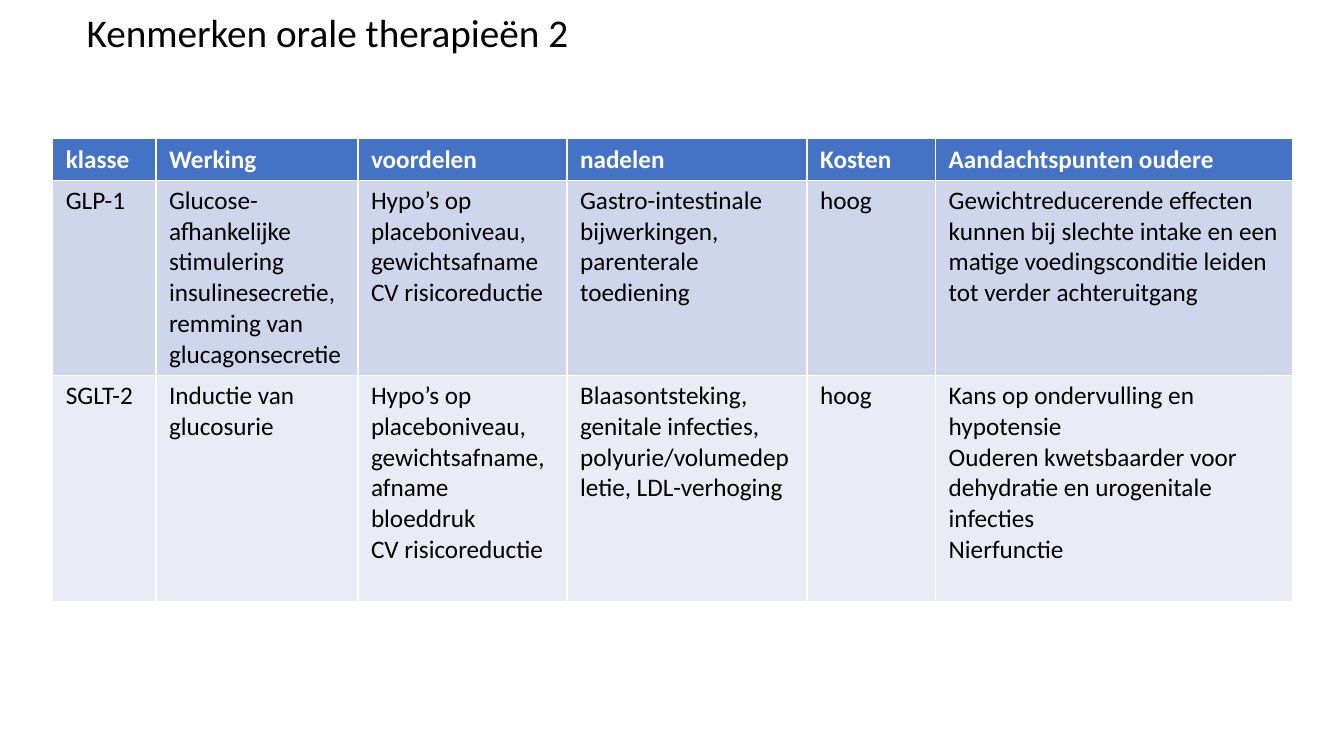
import pptx
import pptx.dml.color
import pptx.enum.text
import pptx.util

Cm = pptx.util.Cm
Pt = pptx.util.Pt

HEADER_FILL = "4472C4"
BODY_FILLS = ["CFD5EA", "E9EBF5"]
COLUMN_WIDTHS = [2.6, 5.09, 5.27, 6.05, 3.24, 9]
ROW_HEIGHTS = [1.04, 4.92, 5.69]
THERAPIES = [
    ["klasse", "Werking", "voordelen", "nadelen", "Kosten", "Aandachtspunten oudere"],
    [
        "GLP-1",
        "Glucose-afhankelijke stimulering insulinesecretie, remming van glucagonsecretie",
        "Hypo’s op placeboniveau, gewichtsafname\nCV risicoreductie",
        "Gastro-intestinale bijwerkingen, parenterale toediening",
        "hoog",
        "Gewichtreducerende effecten kunnen bij slechte intake en een "
        "matige voedingsconditie leiden tot verder achteruitgang",
    ],
    [
        "SGLT-2",
        "Inductie van glucosurie",
        "Hypo’s op placeboniveau, gewichtsafname, afname bloeddruk\nCV risicoreductie",
        "Blaasontsteking, genitale infecties, polyurie/volumedepletie, LDL-verhoging",
        "hoog",
        "Kans op ondervulling en hypotensie\n"
        "Ouderen kwetsbaarder voor dehydratie en urogenitale infecties\n"
        "Nierfunctie",
    ],
]


def color(value):
    return pptx.dml.color.RGBColor.from_string(value)


def format_text(text_frame, size, text_color, bold=False):
    for paragraph in text_frame.paragraphs:
        paragraph.alignment = pptx.enum.text.PP_ALIGN.LEFT
        paragraph.font.name = "Calibri"
        paragraph.font.size = Pt(size)
        paragraph.font.bold = bold
        paragraph.font.color.rgb = color(text_color)


def add_title(slide, left, top, width, height):
    title = slide.shapes.title
    title.left, title.top, title.width, title.height = left, top, width, height
    text_frame = title.text_frame
    text_frame.text = "Kenmerken orale therapieën 2"
    text_frame.auto_size = pptx.enum.text.MSO_AUTO_SIZE.NONE
    text_frame.vertical_anchor = pptx.enum.text.MSO_ANCHOR.MIDDLE
    text_frame.paragraphs[0].line_spacing = 0.9
    format_text(text_frame, 28, "000000")


def fill_cell(cell, text, fill, text_color, bold):
    cell.text = text
    cell.fill.solid()
    cell.fill.fore_color.rgb = color(fill)
    cell.margin_left = cell.margin_right = Cm(0.33)
    cell.margin_top = cell.margin_bottom = Cm(0.13)
    format_text(cell.text_frame, 18, text_color, bold)


def add_therapy_table(slide, left, top, width, height):
    table = slide.shapes.add_table(
        len(THERAPIES), len(COLUMN_WIDTHS), left, top, width, height
    ).table
    for column, share in zip(table.columns, COLUMN_WIDTHS):
        column.width = int(width * share / sum(COLUMN_WIDTHS))
    for row, share in zip(table.rows, ROW_HEIGHTS):
        row.height = int(height * share / sum(ROW_HEIGHTS))
    for row_index, texts in enumerate(THERAPIES):
        is_header = row_index == 0
        fill = HEADER_FILL if is_header else BODY_FILLS[row_index - 1]
        text_color = "FFFFFF" if is_header else "000000"
        for column_index, text in enumerate(texts):
            cell = table.cell(row_index, column_index)
            fill_cell(cell, text, fill, text_color, is_header)


def main():
    presentation = pptx.Presentation()
    presentation.slide_width = Cm(33.87)
    presentation.slide_height = Cm(19.05)
    slide = presentation.slides.add_slide(presentation.slide_layouts[5])
    add_title(slide, Cm(1.93), Cm(0.13), Cm(30), Cm(1.47))
    add_therapy_table(
        slide, Cm(1.33), Cm(3.5), Cm(sum(COLUMN_WIDTHS)), Cm(sum(ROW_HEIGHTS))
    )
    presentation.save("out.pptx")


if __name__ == "__main__":
    main()
